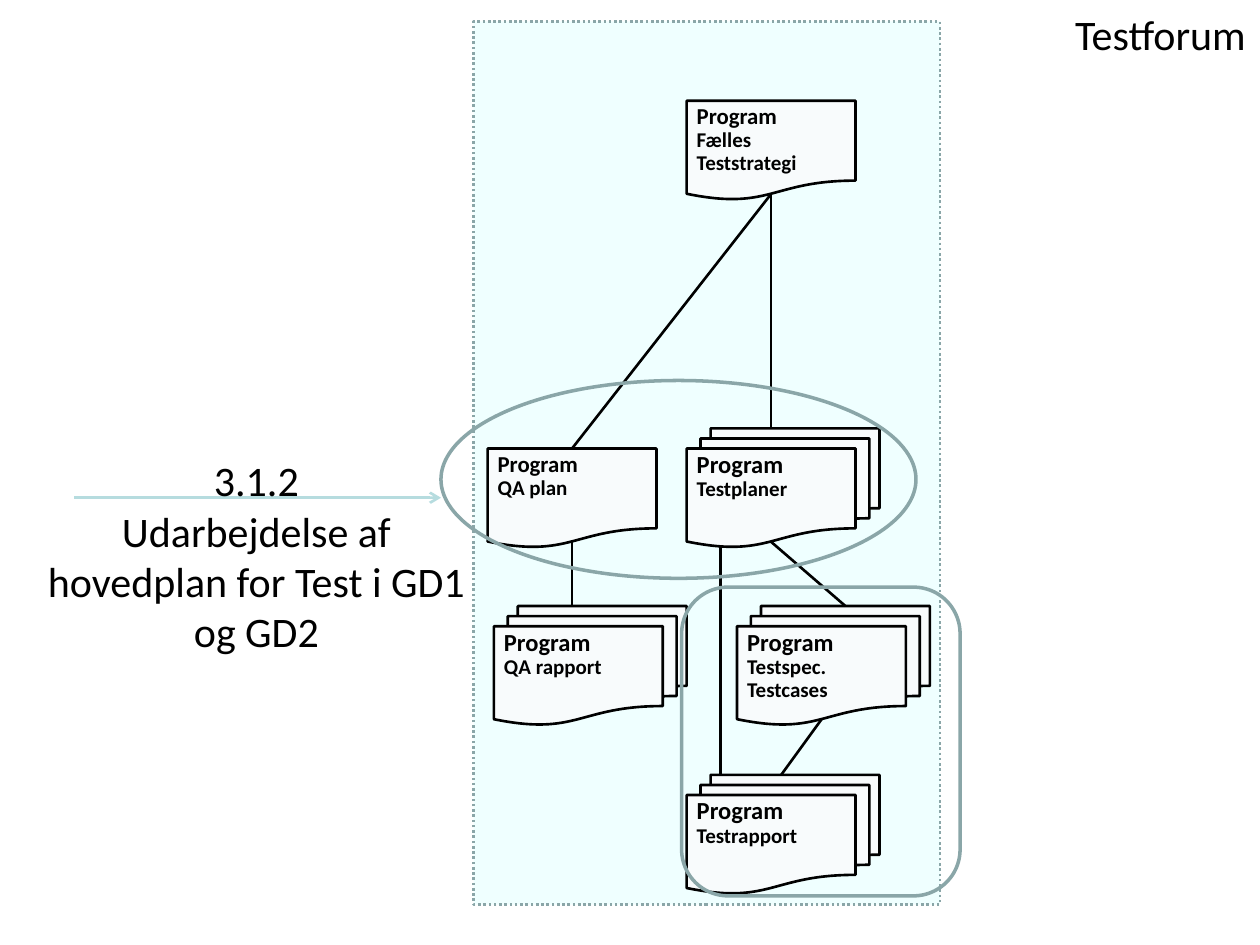
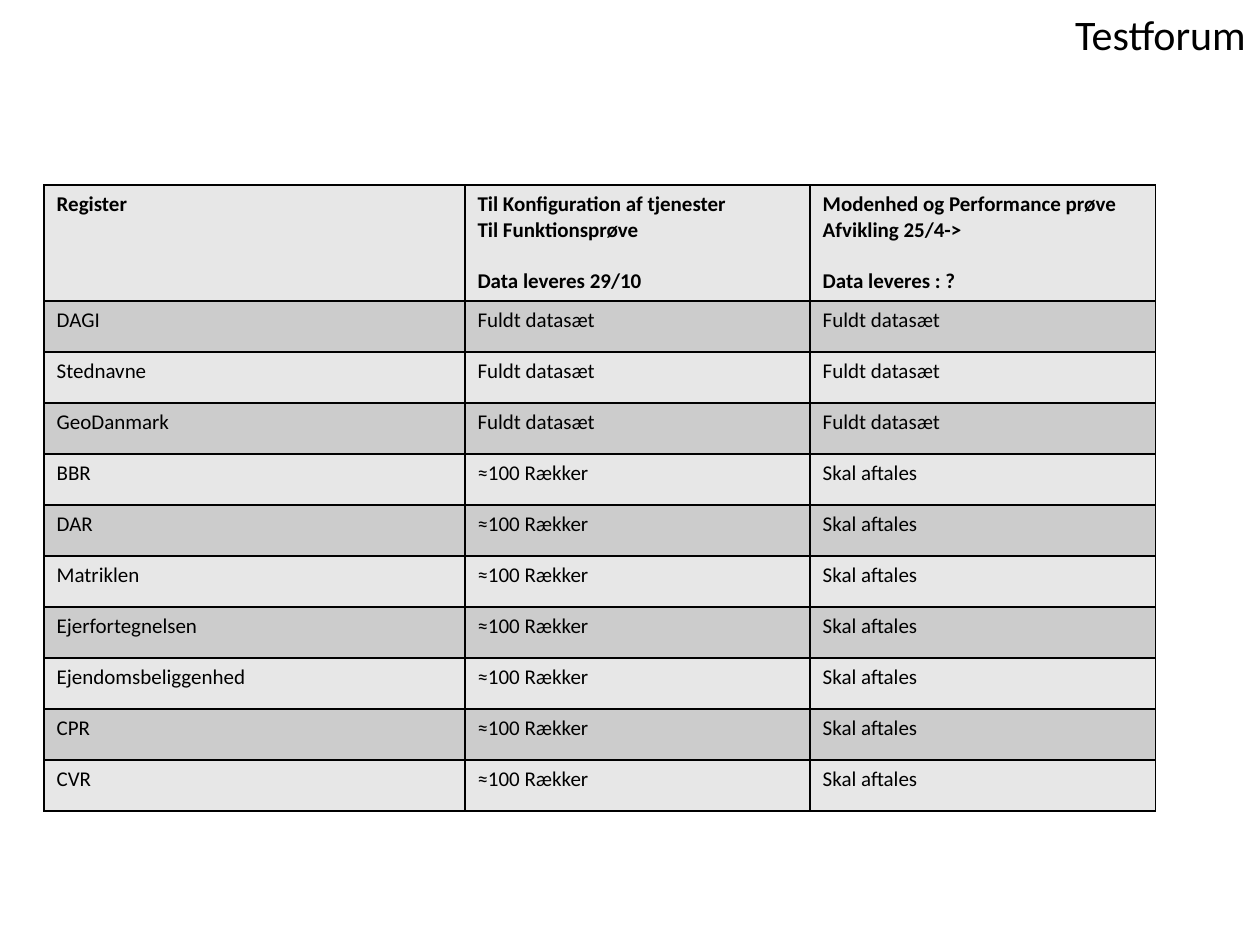
from dataclasses import dataclass

from lxml import etree
from pptx import Presentation
from pptx.dml.color import RGBColor
from pptx.enum.dml import MSO_LINE
from pptx.enum.shapes import MSO_CONNECTOR, MSO_SHAPE
from pptx.enum.text import MSO_ANCHOR, PP_ALIGN
from pptx.oxml.ns import qn
from pptx.util import Inches, Pt


@dataclass(frozen=True)
class Theme:
    font: str = "Calibri"
    black: str = "000000"
    sheet: str = "F8FBFC"
    panel: str = "EFFFFF"
    marker: str = "8AA6A8"
    arrow: str = "B6DCDF"
    light_row: str = "E7E7E7"
    dark_row: str = "CCCCCC"
    large: int = 24
    small: int = 12


THEME = Theme()
TITLE = "Testforum"
CALLOUT = ["3.1.2", "Udarbejdelse af hovedplan for Test i GD1 og GD2"]

# name: (left, top, lines, size of first line, stacked)
DOCUMENTS = {
    "spec": (5.85, 4.97, ["Program", "Testspec.", "Testcases"], 14, True),
    "test report": (5.45, 6.31, ["Program", "Testrapport"], 14, True),
    "test plans": (5.45, 3.56, ["Program", "Testplaner"], 14, True),
    "qa plan": (3.87, 3.56, ["Program", "QA plan"], 13, False),
    "qa report": (3.92, 4.97, ["Program", "QA rapport"], 14, True),
    "strategy": (5.45, 0.8, ["Program", "Fælles", "Teststrategi"], 13, False),
}
# upper document, lower document, x of the lower end (None: middle of its top)
LINKS = [
    ("test plans", "spec", None),
    ("spec", "test report", 6.2),
    ("qa plan", "qa report", 4.54),
    ("strategy", "test plans", 6.12),
    ("strategy", "qa plan", None),
]
SHEET_WIDTH, SHEET_HEIGHT = 1.34, 0.79
SHEET_WAVE = 0.74  # height of the wave at the middle of a sheet
SHEET_OFFSETS = [(0.19, -0.16), (0.11, -0.08)]

FULL, SAMPLE, OPEN = "Fuldt datasæt", "≈100 Rækker", "Skal aftales"
HEADER = [
    ["Register"],
    ["Til Konfiguration af tjenester", "Til Funktionsprøve", "Data leveres 29/10"],
    ["Modenhed og Performance prøve", "Afvikling 25/4->", "Data leveres : ?"],
]
REGISTERS = [(name, FULL, FULL) for name in ("DAGI", "Stednavne", "GeoDanmark")] + [
    (name, SAMPLE, OPEN)
    for name in ("BBR", "DAR", "Matriklen", "Ejerfortegnelsen",
                 "Ejendomsbeliggenhed", "CPR", "CVR")
]
COLUMN_WIDTHS = [3.34, 2.74, 2.74]
HEADER_HEIGHT, ROW_HEIGHT = 0.92, 0.405


def rgb(value):
    return RGBColor.from_string(value)


def write(frame, lines, sizes, bold=False, align=PP_ALIGN.LEFT):
    """Fill a text frame; the last size holds for all remaining lines."""
    frame.text = "\n".join(lines)
    for index, para in enumerate(frame.paragraphs):
        para.alignment = align
        for span in para.runs:
            span.font.name = THEME.font
            span.font.size = Pt(sizes[min(index, len(sizes) - 1)])
            span.font.bold = bold
            span.font.color.rgb = rgb(THEME.black)


def add_box(page, kind, left, top, width, height, line, weight, fill=None):
    box = page.shapes.add_shape(
        kind, Inches(left), Inches(top), Inches(width), Inches(height))
    box.shadow.inherit = False
    if fill:
        box.fill.solid()
        box.fill.fore_color.rgb = rgb(fill)
    else:
        box.fill.background()
    box.line.color.rgb = rgb(line)
    box.line.width = Pt(weight)
    return box


def add_line(page, start, end, color=THEME.black):
    line = page.shapes.add_connector(
        MSO_CONNECTOR.STRAIGHT, *(Inches(value) for value in (*start, *end)))
    line.line.color.rgb = rgb(color)
    line.line.width = Pt(1.5)
    etree.SubElement(line._element.spPr, qn("a:effectLst"))
    return line


def add_document(page, left, top, lines, first_size, stacked):
    """Draw the sheets from back to front; return the front and back sheets."""
    offsets = (SHEET_OFFSETS if stacked else []) + [(0, 0)]
    sheets = [
        add_box(page, MSO_SHAPE.FLOWCHART_DOCUMENT, left + right, top + down,
                SHEET_WIDTH, SHEET_HEIGHT, THEME.black, 1.5, THEME.sheet)
        for right, down in offsets
    ]
    frame = sheets[-1].text_frame
    frame.word_wrap = True
    frame.vertical_anchor = MSO_ANCHOR.TOP
    frame.margin_left = frame.margin_right = Inches(0.08)
    frame.margin_top = frame.margin_bottom = Inches(0.03)
    write(frame, lines, [first_size, THEME.small], bold=True)
    for para in frame.paragraphs:
        para.line_spacing = 0.9
    return sheets[-1], sheets[0]


def link_documents(page, upper, lower, end_x):
    """Join the wave of the upper sheet to the top of the lower stack."""
    front, back = upper[0], lower[1]
    line = add_line(page, (0, 0), (1, 1))
    line.begin_connect(front, 2)
    line.begin_y = front.top + Inches(SHEET_WAVE)
    if end_x is None:
        line.end_connect(back, 0)
    else:
        line.end_x, line.end_y = Inches(end_x), back.top


def style_cell(cell, fill):
    cell.fill.solid()
    cell.fill.fore_color.rgb = rgb(fill)
    properties = cell._tc.get_or_add_tcPr()
    for index, side in enumerate(("lnL", "lnR", "lnT", "lnB")):
        border = etree.Element(qn(f"a:{side}"), w=str(Pt(1)))
        solid = etree.SubElement(border, qn("a:solidFill"))
        etree.SubElement(solid, qn("a:srgbClr"), val=THEME.black)
        properties.insert(index, border)


def prepare_layout(deck):
    """Place the shared title in the top right corner of the layout."""
    layout = deck.slide_layouts.get_by_name("Title Only")
    title = layout.placeholders[0]
    title.left, title.top = Inches(8.42), Inches(0.02)
    title.width, title.height = Inches(1.58), Inches(0.5)
    title.text_frame.word_wrap = False
    title.text_frame.vertical_anchor = MSO_ANCHOR.TOP
    return layout


def add_page(deck, layout):
    page = deck.slides.add_slide(layout)
    write(page.shapes.title.text_frame, [TITLE], [THEME.large], align=PP_ALIGN.CENTER)
    return page


def build_overview(page):
    panel = add_box(page, MSO_SHAPE.RECTANGLE, 3.76, 0.17, 3.7, 7.01,
                    THEME.marker, 1.5, THEME.panel)
    panel.line.dash_style = MSO_LINE.ROUND_DOT
    add_line(page, (5.72, 4.34), (5.72, 6.31))

    documents = {name: add_document(page, *parts) for name, parts in DOCUMENTS.items()}
    for upper, lower, end_x in LINKS:
        link_documents(page, documents[upper], documents[lower], end_x)

    add_box(page, MSO_SHAPE.OVAL, 3.5, 3.02, 3.77, 1.57, THEME.marker, 2)
    arrow = add_line(page, (0.59, 3.95), (3.5, 3.95), THEME.arrow)
    etree.SubElement(arrow.line._get_or_add_ln(), qn("a:tailEnd"), type="arrow")
    add_box(page, MSO_SHAPE.ROUNDED_RECTANGLE, 5.41, 4.66, 2.21, 2.45, THEME.marker, 2)

    callout = page.shapes.add_textbox(
        Inches(0.2), Inches(3.56), Inches(3.67), Inches(1.01))
    callout.text_frame.word_wrap = True
    write(callout.text_frame, CALLOUT, [THEME.large], align=PP_ALIGN.CENTER)


def build_register_table(page):
    height = HEADER_HEIGHT + ROW_HEIGHT * len(REGISTERS)
    table = page.shapes.add_table(
        len(REGISTERS) + 1, len(COLUMN_WIDTHS), Inches(0.35), Inches(1.47),
        Inches(sum(COLUMN_WIDTHS)), Inches(height)).table
    for column, width in zip(table.columns, COLUMN_WIDTHS):
        column.width = Inches(width)

    rows = [HEADER] + [[[text] for text in register] for register in REGISTERS]
    for number, row in enumerate(rows):
        table.rows[number].height = Inches(ROW_HEIGHT if number else HEADER_HEIGHT)
        for column, lines in enumerate(row):
            cell = table.cell(number, column)
            style_cell(cell, THEME.dark_row if number % 2 else THEME.light_row)
            write(cell.text_frame, lines, [THEME.small], bold=number == 0)
            if len(lines) > 1:
                cell.text_frame.paragraphs[-1].space_before = Pt(14.6)


def main():
    deck = Presentation()
    deck.slide_width, deck.slide_height = Inches(10), Inches(7.5)
    layout = prepare_layout(deck)
    build_overview(add_page(deck, layout))
    build_register_table(add_page(deck, layout))
    deck.save("out.pptx")


if __name__ == "__main__":
    main()
